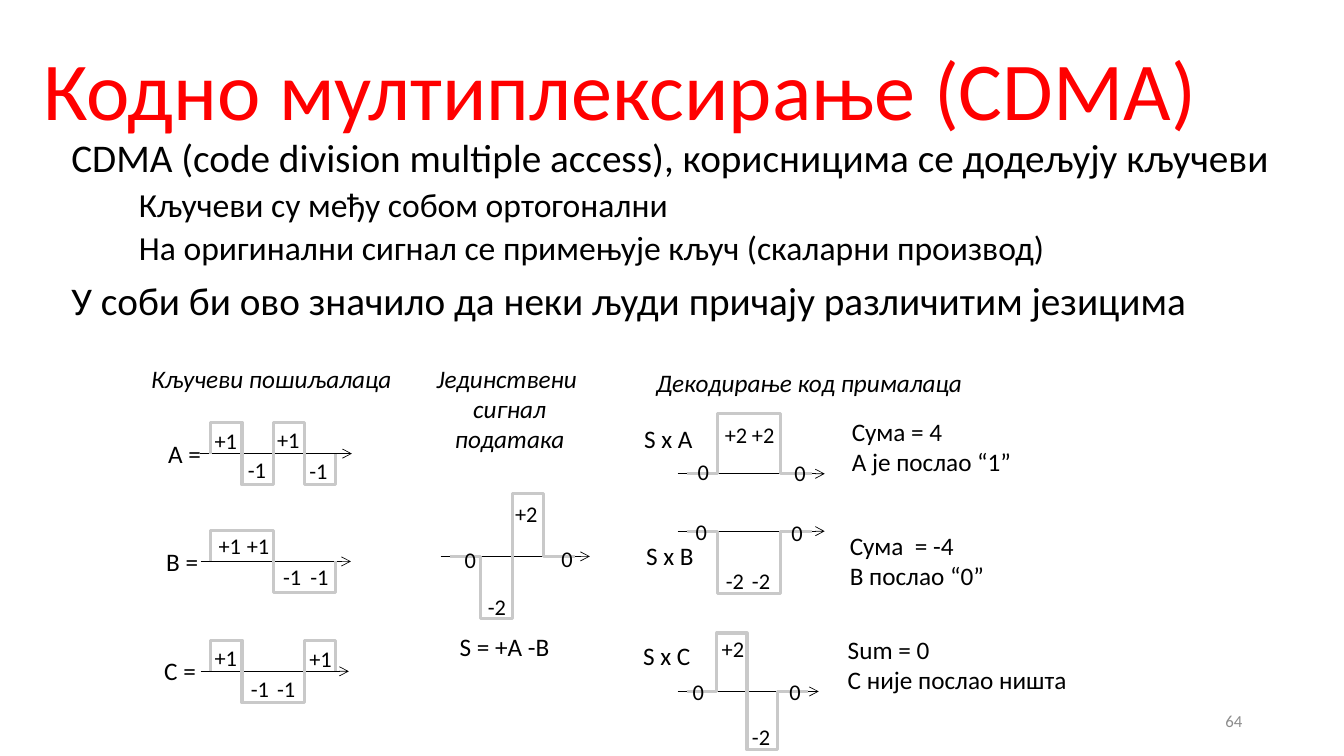
"""Build the slide on code division multiplexing (CDMA) with its signal diagrams."""
from lxml import etree
from pptx import Presentation
from pptx.dml.color import RGBColor
from pptx.enum.shapes import MSO_CONNECTOR
from pptx.enum.text import MSO_ANCHOR, MSO_AUTO_SIZE, PP_ALIGN
from pptx.oxml.ns import qn
from pptx.util import Inches, Pt

STRAIGHT = MSO_CONNECTOR.STRAIGHT
MIDDLE, TOP = MSO_ANCHOR.MIDDLE, MSO_ANCHOR.TOP
FIT_TEXT, FIXED = MSO_AUTO_SIZE.SHAPE_TO_FIT_TEXT, MSO_AUTO_SIZE.NONE
LEFT, CENTER, RIGHT = PP_ALIGN.LEFT, PP_ALIGN.CENTER, PP_ALIGN.RIGHT

COLORS = {"title": "FF0000", "text": "000000", "axis": "000000",
          "wave": "C9C9C9", "number": "8C8C8C"}

presentation = Presentation()
presentation.slide_width = Inches(13.33)
presentation.slide_height = Inches(7.5)
slide = presentation.slides.add_slide(presentation.slide_layouts[6])


def add_text(lines, left, top, width, height, size=18, color="text", align=LEFT,
             italic=False, anchor=TOP, wrap=False):
    frame = slide.shapes.add_textbox(
        Inches(left), Inches(top), Inches(width), Inches(height)).text_frame
    frame.word_wrap = wrap
    frame.auto_size = FIXED if wrap else FIT_TEXT
    frame.vertical_anchor = anchor
    for index, line in enumerate(lines):
        paragraph = frame.paragraphs[0] if index == 0 else frame.add_paragraph()
        paragraph.text = line
        paragraph.alignment = align
        paragraph.font.name = "Calibri"
        paragraph.font.size = Pt(size)
        paragraph.font.italic = italic
        paragraph.font.color.rgb = RGBColor.from_string(COLORS[color])
    return frame


def add_signal(axis_left, axis_right, axis, wave_left, chip, unit, levels):
    baseline = slide.shapes.add_connector(
        STRAIGHT, Inches(axis_left), Inches(axis), Inches(axis_right), Inches(axis))
    baseline.line.color.rgb = RGBColor.from_string(COLORS["axis"])
    baseline.line.width = Pt(0.5)
    etree.SubElement(baseline.line._get_or_add_ln(), qn("a:tailEnd"), type="arrow")
    etree.SubElement(baseline._element.spPr, qn("a:effectLst"))

    corners = []
    for index, level in enumerate(levels):
        height = Inches(axis - level * unit)
        corners += [(Inches(wave_left + index * chip), height),
                    (Inches(wave_left + (index + 1) * chip), height)]
    corners.append((corners[-1][0], Inches(axis)))
    outline = slide.shapes.build_freeform(Inches(wave_left), Inches(axis))
    outline.add_line_segments(corners, close=False)
    wave = outline.convert_to_shape()
    wave.shadow.inherit = False
    wave.fill.background()
    wave.line.color.rgb = RGBColor.from_string(COLORS["wave"])
    wave.line.width = Pt(2.25)


title = add_text(["Кодно мултиплексирање (CDMA)"], 0.33, 0.31, 12.67, 1.25,
                 size=58.7, color="title", anchor=MIDDLE, wrap=True)
title.paragraphs[0].line_spacing = 0.9

points = [
    ("CDMA (code division multiple access), корисницима се додељују кључеви", 0),
    ("Кључеви су међу собом ортогонални", 1),
    ("На оригинални сигнал се примењује кључ (скаларни производ)", 1),
    ("У соби би ово значило да неки људи причају различитим језицима", 0),
]
body = add_text([point for point, level in points], 0.61, 1.33, 12.22, 5.03,
                size=28, wrap=True)
for paragraph, (point, level) in zip(body.paragraphs, points):
    paragraph.level = level
    paragraph.line_spacing = 0.9
    paragraph.space_before = Pt(5 if level else 10)
    paragraph.font.size = Pt(24 if level else 28)
    properties = paragraph._p.get_or_add_pPr()
    properties.set("marL", str(Inches(0.67 * level)))
    properties.set("indent", "0")

headings = [
    (["Кључеви пошиљалаца"], 1.4, 3.56, 2.61, 0.4, LEFT),
    (["Јединствени \nсигнал\nподатака"], 4.22, 3.55, 1.67, 1.01, CENTER),
    (["Декодирање код прималаца"], 6.39, 3.59, 3.27, 0.4, CENTER),
]
for lines, left, top, width, height, align in headings:
    add_text(lines, left, top, width, height, align=align, italic=True)

# Each signal: axis start, axis end, axis height, wave start, chip width, unit height,
# then one (level, label left, label top) per chip.
signals = [
    (1.98, 3.49, 4.5, 2.09, 0.31, 0.31,
     [(1, 2.03, 4.19), (-1, 2.36, 4.48), (1, 2.65, 4.18), (-1, 2.97, 4.49)]),
    (1.99, 3.48, 5.57, 2.09, 0.31, 0.31,
     [(1, 2.07, 5.23), (1, 2.35, 5.23), (-1, 2.71, 5.54), (-1, 2.98, 5.54)]),
    (1.99, 3.46, 6.66, 2.09, 0.31, 0.31,
     [(1, 2.03, 6.34), (-1, 2.39, 6.65), (-1, 2.65, 6.65), (1, 2.97, 6.35)]),
    (4.37, 5.85, 5.52, 4.46, 0.31, 0.31,
     [(0, 4.51, 5.37), (-2, 4.74, 5.84), (2, 5.01, 4.91), (0, 5.47, 5.36)]),
    (6.72, 8.18, 4.7, 6.81, 0.31, 0.3,
     [(0, 6.82, 4.5), (2, 7.09, 4.13), (2, 7.36, 4.13), (0, 7.78, 4.51)]),
    (6.72, 8.18, 5.27, 6.81, 0.31, 0.31,
     [(0, 6.8, 5.09), (-2, 7.1, 5.58), (-2, 7.36, 5.58), (0, 7.75, 5.1)]),
    (6.72, 8.12, 6.86, 6.81, 0.3, 0.29,
     [(0, 6.77, 6.68), (2, 7.06, 6.25), (-2, 7.36, 7.13), (0, 7.73, 6.68)]),
]
for *geometry, chips in signals:
    add_signal(*geometry, [level for level, left, top in chips])
    for level, left, top in chips:
        label = f"{level:+d}" if level else "0"
        width = 0.43 if level > 0 else 0.38 if level < 0 else 0.32
        add_text([label], left, top, width, 0.37, size=16)

captions = [
    (["A ="], 1.57, 4.3, 0.53),
    (["B ="], 1.55, 5.37, 0.52),
    (["C ="], 1.53, 6.45, 0.52),
    (["S = +A -B"], 4.46, 6.21, 1.1),
    (["S x A"], 6.29, 4.15, 0.69),
    (["S x B"], 6.31, 5.31, 0.68),
    (["S x C"], 6.28, 6.3, 0.68),
    (["Сума = 4", "А је послао “1”"], 8.35, 4.08, 1.8),
    (["Сума  = -4", "B послао “0”"], 8.33, 5.21, 1.55),
    (["Sum = 0", "C није послао ништа"], 8.31, 6.24, 2.4),
]
for lines, left, top, width in captions:
    add_text(lines, left, top, width, 0.4 if len(lines) == 1 else 0.71)

add_text(["64"], 9.42, 6.95, 3, 0.4, size=12, color="number", align=RIGHT,
         anchor=MIDDLE, wrap=True)

presentation.save("out.pptx")
